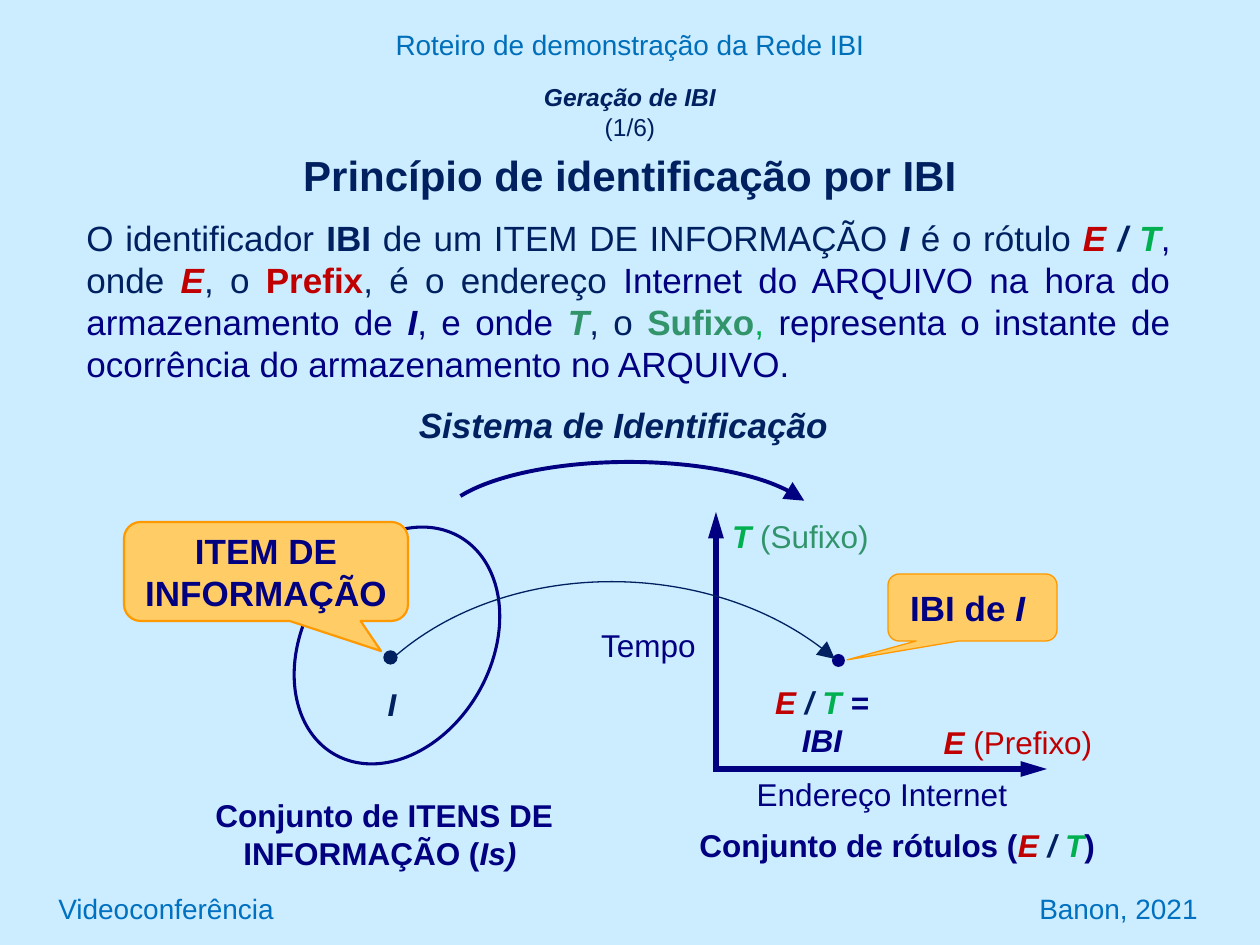
from lxml import etree
from pptx import Presentation, util as u
from pptx.dml.color import RGBColor
from pptx.enum import shapes, text
from pptx.oxml.ns import qn

PX = 914400 / 126
NAVY, DARK, RED = "000080", "002060", "C00000"
GREEN, SEA, BLUE = "00B050", "32946A", "0070C0"
AMBER, ORANGE = "FFCC66", "FF9900"
AL = text.PP_ALIGN
GEO = shapes.MSO_SHAPE


def px(n):
    return u.Emu(round(n * PX))


def rgb(value):
    return RGBColor.from_string(value)


def write(p, runs, size, align=AL.CENTER):
    """Fill a paragraph with (text, colour, style) runs; style holds b and i."""
    p.alignment = align
    for words, color, style in runs:
        r = p.add_run()
        r.text = words
        r.font.name, r.font.size = "Arial", u.Pt(size)
        r.font.bold, r.font.italic = "b" in style, "i" in style
        r.font.color.rgb = rgb(color)


def label(s, box, runs, size=18, align=AL.CENTER, wrap=True):
    tf = s.shapes.add_textbox(*map(px, box)).text_frame
    tf.word_wrap = wrap
    write(tf.paragraphs[0], runs, size, align)
    return tf


def outline(sp, color, width, head=None):
    """Set the line; head is the arrowhead's width (med or lg), always long."""
    sp.line.color.rgb = rgb(color)
    sp.line.width = u.Pt(width)
    if head:
        etree.SubElement(sp.line._get_or_add_ln(), qn("a:tailEnd"),
                         type="triangle", w=head, len="lg")


def shape(s, kind, box, fill=None, line=None, width=0.75, adj=(), head=None):
    sp = s.shapes.add_shape(kind, *map(px, box))
    sp.shadow.inherit = False
    for i, value in enumerate(adj):
        sp.adjustments[i] = value
    if fill:
        sp.fill.solid()
        sp.fill.fore_color.rgb = rgb(fill)
    else:
        sp.fill.background()
    if line:
        outline(sp, line, width, head)
    else:
        sp.line.fill.background()
    return sp


def callout(s, box, adj, width, runs):
    sp = shape(s, GEO.ROUNDED_RECTANGULAR_CALLOUT, box, AMBER, ORANGE, width, adj)
    tf = sp.text_frame
    tf.word_wrap = True
    tf.vertical_anchor = text.MSO_ANCHOR.MIDDLE
    write(tf.paragraphs[0], runs, 20)


def axis(s, x1, y1, x2, y2):
    c = s.shapes.add_connector(shapes.MSO_CONNECTOR.STRAIGHT, *map(px, (x1, y1, x2, y2)))
    outline(c, NAVY, 3, "med")
    etree.SubElement(c._element.spPr, qn("a:effectLst"))


def curve(s, start, top, end, controls):
    """Bézier arrow: the three points give the bounds, the controls the bend."""
    fb = s.shapes.build_freeform(*start, scale=PX)
    fb.add_line_segments([top, end], close=False)
    sp = fb.convert_to_shape()
    sp.shadow.inherit = False
    sp.fill.background()
    outline(sp, DARK, 0.75, "lg")
    track = sp._element.find(".//" + qn("a:path"))
    for segment in track.findall(qn("a:lnTo")):
        track.remove(segment)
    bend = etree.SubElement(track, qn("a:cubicBezTo"))
    # The track counts in px from the corner of the bounds
    for x, y in (*controls, end):
        etree.SubElement(bend, qn("a:pt"), x=str(x - start[0]), y=str(y - top[1]))


def header(s, x, y, w):
    label(s, (x, y, w, 47), [("Roteiro de demonstração da Rede IBI", "006FBA", "")], 16)
    tf = label(s, (x + 94, y + 55, w - 188, 123), [("Geração de IBI", DARK, "bi")], 14)
    tf.paragraphs[0].add_line_break()
    write(tf.paragraphs[0], [("(1/6)", DARK, "")], 14)
    p = tf.add_paragraph()
    p.space_before = u.Pt(5)
    write(p, [("Princípio de identificação por IBI", DARK, "b")], 24)


def definition(s, box):
    tf = label(s, box, [
        ("O identificador ", DARK, ""), ("IBI", DARK, "b"),
        (" de um ITEM DE INFORMAÇÃO ", DARK, ""), ("I", DARK, "bi"),
        (" é o rótulo", DARK, ""), (" E ", RED, "bi"), ("/ ", DARK, "bi"),
        ("T", GREEN, "bi"), (", ", NAVY, ""), ("onde ", DARK, ""), ("E", RED, "bi"),
        (", o ", DARK, ""), ("Prefix", RED, "b"), (", é o endereço", DARK, ""),
        (" Internet do ARQUIVO na hora do armazenamento de ", NAVY, ""),
        ("I", NAVY, "bi"), (", e onde ", NAVY, ""), ("T", SEA, "bi"),
        (", o ", DARK, ""), ("Sufixo", SEA, "b"), (", ", GREEN, ""),
        ("representa o instante de ocorrência do armazenamento no ARQUIVO.", NAVY, ""),
    ], 20, AL.JUSTIFY)
    tf.margin_top = tf.margin_bottom = 0


def item_set(s, x, y):
    """Set of information items, at the left."""
    shape(s, GEO.OVAL, (x + 179, y - 2, 188, 251), None, NAVY, 1.75).rotation = 30
    shape(s, GEO.OVAL, (x + 260, y + 129, 13, 13), DARK, DARK)
    callout(s, (x, y, 284, 99), (0.405, 0.804, 0.167), 1.25,
            [("ITEM DE INFORMAÇÃO", NAVY, "b")])
    label(s, (x + 251, y + 157, 34, 50), [("I", DARK, "bi")], wrap=False)
    label(s, (x + 66, y + 268, 380, 89), [
        (" Conjunto de ITENS DE INFORMAÇÃO (", NAVY, "b"), ("Is)", NAVY, "bi")])


def label_set(s, x, y):
    """Set of labels, at the right: axes that meet at (x, y)."""
    axis(s, x - 3, y, x + 331, y)
    axis(s, x, y, x, y - 257)
    shape(s, GEO.OVAL, (x + 116, y - 115, 13, 13), NAVY)
    callout(s, (x + 172, y - 195, 169, 67), (-0.742, 0.782, 0.167), 0.75,
            [("IBI de ", NAVY, "b"), ("I", NAVY, "bi"), (" ", NAVY, "b")])
    label(s, (x + 27, y, 278, 50), [("Endereço Internet", NAVY, "")], wrap=False)
    label(s, (x + 31, y - 92, 150, 89), [
        ("E", RED, "bi"), (" / ", DARK, "bi"), ("T ", GREEN, "bi"), ("= IBI", NAVY, "bi")])
    label(s, (x - 7, y - 258, 174, 50), [
        (" ", DARK, "bi"), ("T ", GREEN, "bi"), ("(Sufixo)", SEA, "")])
    label(s, (x + 213, y - 52, 178, 50), [("E ", RED, "bi"), ("(Prefixo)", RED, "")])
    label(s, (x - 128, y - 149, 121, 50), [("Tempo", NAVY, "")], wrap=False)
    label(s, (x - 31, y + 51, 433, 50), [
        ("Conjunto de rótulos (", NAVY, "b"), ("E ", RED, "bi"), ("/ ", DARK, "bi"),
        ("T", GREEN, "bi"), (") ", NAVY, "b")], wrap=False)


def mapping(s, x, y):
    """Identification system: arrows from the items to the labels."""
    label(s, (x - 37, y - 65, 447, 55), [("Sistema de Identificação", DARK, "bi")], 20,
          wrap=False)
    shape(s, GEO.ARC, (x, y, 384, 131), None, NAVY, 2.25, (114.33, 210.786), "lg")
    curve(s, (x - 45, y + 197), (x + 176, y + 121), (x + 398, y + 197),
          [(x + 68, y + 96), (x + 281, y + 95)])


def footer(s, x, y, w):
    for words, align in (("Videoconferência", AL.LEFT), ("Banon, 2021", AL.RIGHT)):
        tf = label(s, (x, y, w, 53), [(words, BLUE, "")], 16, align)
        tf.vertical_anchor = text.MSO_ANCHOR.MIDDLE


def main():
    prs = Presentation()
    prs.slide_width, prs.slide_height = px(1260), px(945)
    s = prs.slides.add_slide(prs.slide_layouts[6])
    s.background.fill.solid()
    s.background.fill.fore_color.rgb = rgb("CCECFF")
    header(s, 0, 21, 1260)
    definition(s, (74, 216, 1109, 180))
    item_set(s, 124, 522)
    label_set(s, 716, 769)
    mapping(s, 437, 462)
    footer(s, 46, 882, 1164)
    prs.save("out.pptx")


if __name__ == "__main__":
    main()
